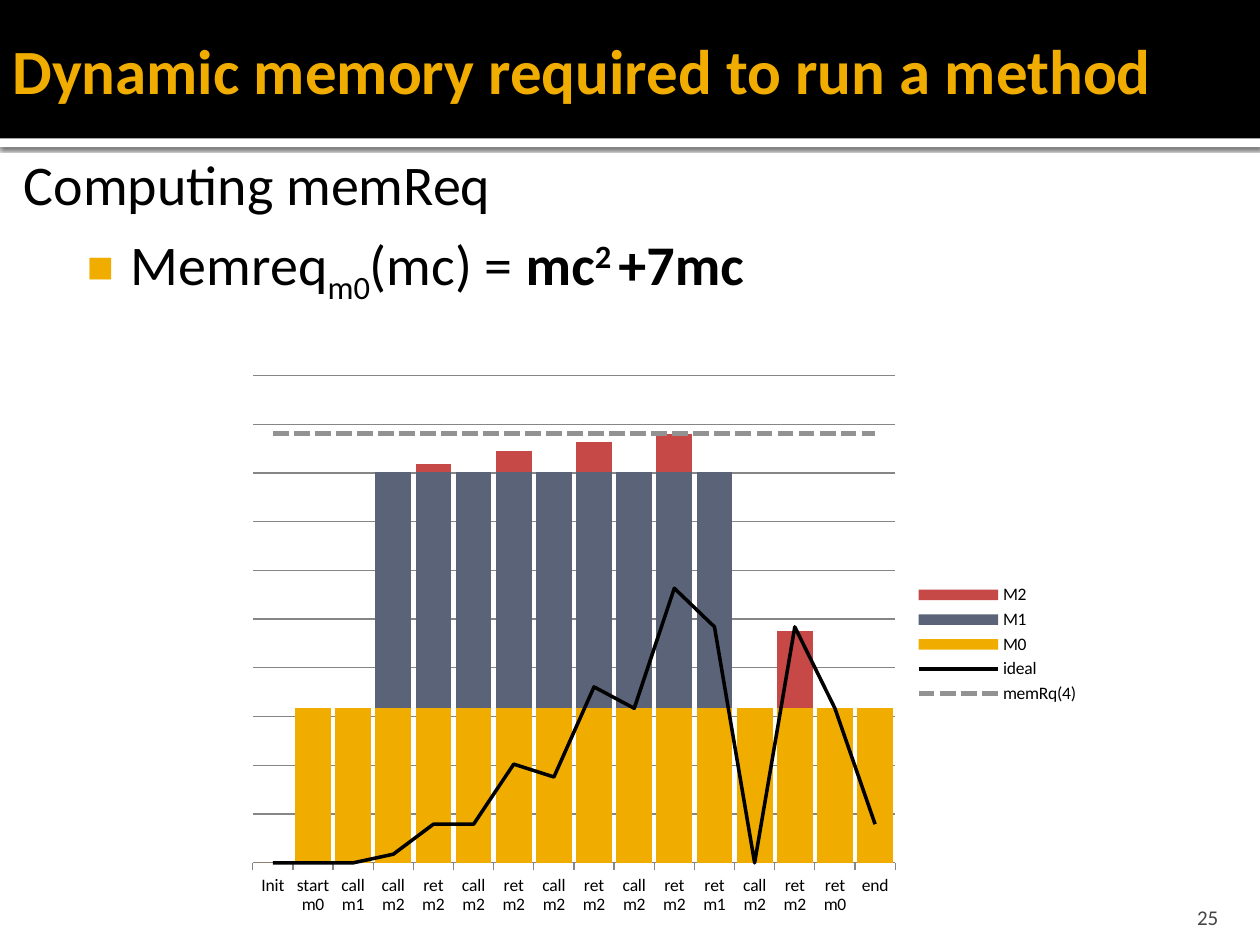
from lxml import etree
from pptx import Presentation
from pptx.chart.data import CategoryChartData
from pptx.dml.color import RGBColor
from pptx.enum.chart import XL_CHART_TYPE, XL_LEGEND_POSITION, XL_MARKER_STYLE, XL_TICK_MARK
from pptx.enum.dml import MSO_LINE
from pptx.enum.shapes import MSO_SHAPE
from pptx.enum.text import MSO_ANCHOR, MSO_AUTO_SIZE, PP_ALIGN
from pptx.oxml import parse_xml
from pptx.oxml.ns import nsdecls, qn
from pptx.util import Cm, Pt

STACKED = XL_CHART_TYPE.COLUMN_STACKED
RIGHT = XL_LEGEND_POSITION.RIGHT
TICK_OUT = XL_TICK_MARK.OUTSIDE
NO_MARK = XL_MARKER_STYLE.NONE
DASH, SOLID = MSO_LINE.SQUARE_DOT, MSO_LINE.SOLID
TOP, MIDDLE, BOTTOM = MSO_ANCHOR.TOP, MSO_ANCHOR.MIDDLE, MSO_ANCHOR.BOTTOM

FONT = "Calibri"
GOLD, BLACK, WHITE, GREY = "F0AD00", "000000", "FFFFFF", "868686"
TITLE = [("Dynamic memory required to run a method", True, 0)]
LEAD = [("Computing memReq", False, 0)]
FORMULA = [("Memreq", False, 0), ("m0", False, -25), ("(mc) = ", False, 0),
           ("mc", True, 0), ("2 ", True, 30), ("+7mc", True, 0)]
NUMBER = [("25", False, 0)]
STEPS = ["Init", "start m0", "call m1"] + ["call m2", "ret m2"] * 4 + [
    "ret m1", "call m2", "ret m2", "ret m0", "end"]
BARS = [("M0", GOLD, [0] + [36] * 15),
        ("M1", "5A6378", [0] * 3 + [55] * 9 + [0] * 4),
        ("M2", "C64847", [0, 0, 0, 0, 2, 0, 5, 0, 7, 0, 9, 0, 0, 18, 0, 0])]
LINES = [("ideal", BLACK, [0, 0, 0, 2, 9, 9, 23, 20, 41, 36, 64, 55, 0, 55, 36, 9], 2, SOLID),
         ("memRq(4)", "929292", [100] * 16, 3, DASH)]
PLOT = {"x": 0.02, "y": 0.02, "w": 0.75, "h": 0.87}


def rgb(code):
    """Turn a hex string into a colour."""
    return RGBColor.from_string(code)


def assign(item, values):
    """Set attributes from a dict."""
    for name, value in values.items():
        setattr(item, name, value)


def place(shape, box):
    """Move a shape to a box in centimetres."""
    assign(shape, dict(zip(("left", "top", "width", "height"), map(Cm, box))))


def write(shape, parts, size, color, anchor, pads, align=PP_ALIGN.LEFT):
    """Fill a shape with one formatted paragraph and return it."""
    frame = shape.text_frame
    names = ("margin_left", "margin_top", "margin_right", "margin_bottom")
    assign(frame, dict(zip(names, map(Cm, pads))))
    assign(frame, {"word_wrap": True, "auto_size": MSO_AUTO_SIZE.NONE, "vertical_anchor": anchor})
    para = frame.paragraphs[0]
    assign(para, {"alignment": align, "space_before": Pt(0)})
    for text, bold, base in parts:
        run = para.add_run()
        run.text = text
        assign(run.font, {"name": FONT, "size": Pt(size), "bold": bold})
        run.font.color.rgb = rgb(color)
        if base:
            run._r.get_or_add_rPr().set("baseline", str(base * 1000))
    return para


def indent(para, mark=None):
    """Give a paragraph a hanging indent and an optional bullet."""
    props = para._p.get_or_add_pPr()
    props.set("marL", str(Cm(1.22)))
    props.set("indent", str(-Cm(0.89)))
    if not mark:
        etree.SubElement(props, qn("a:buNone"))
        return
    color = etree.SubElement(props, qn("a:buClr"))
    etree.SubElement(color, qn("a:srgbClr"), val=GOLD)
    etree.SubElement(props, qn("a:buSzPct"), val="80000")
    etree.SubElement(props, qn("a:buFont"), typeface="Arial")
    etree.SubElement(props, qn("a:buChar"), char=mark)


def band(slide, box, color, depth):
    """Draw a plain band at a given depth in the stack."""
    shape = slide.shapes.add_shape(MSO_SHAPE.RECTANGLE, *map(Cm, box))
    shape.shadow.inherit = False
    shape.fill.solid()
    shape.fill.fore_color.rgb = rgb(color)
    shape.line.fill.background()
    slide.shapes._spTree.insert(depth, shape._element)
    return shape


def shade(shape):
    """Cast a soft shadow below a shape."""
    effects = shape._element.spPr.find(qn("a:effectLst"))
    effects.append(parse_xml(
        f'<a:outerShdw {nsdecls("a")} blurRad="{Pt(2.5)}" dist="{Pt(0.8)}" dir="5400000" '
        'algn="tl" rotWithShape="0"><a:srgbClr val="000000"><a:alpha val="60000"/>'
        '</a:srgbClr></a:outerShdw>'))


def split(chart):
    """Move the series after the bars into a line plot on the same axes."""
    bars = chart._chartSpace.find(".//" + qn("c:barChart"))
    plot = parse_xml(f'<c:lineChart {nsdecls("c")}><c:grouping val="standard"/>'
                     '<c:varyColors val="0"/></c:lineChart>')
    for ser in bars.findall(qn("c:ser"))[len(BARS):]:
        for flag in ser.findall(qn("c:invertIfNegative")):
            ser.remove(flag)
        plot.append(ser)
    etree.SubElement(plot, qn("c:marker"), val="1")
    for axis in bars.findall(qn("c:axId")):
        etree.SubElement(plot, qn("c:axId"), val=axis.get("val"))
    bars.addnext(plot)


def arrange(chart):
    """Fix the inner plot area inside the chart."""
    area = chart._chartSpace.find(".//" + qn("c:plotArea"))
    for old in area.findall(qn("c:layout")):
        area.remove(old)
    modes = "".join(f'<c:{key}Mode val="edge"/>' for key in "xy")
    sizes = "".join(f'<c:{key} val="{val}"/>' for key, val in PLOT.items())
    area.insert(0, parse_xml(
        f'<c:layout {nsdecls("c")}><c:manualLayout><c:layoutTarget val="inner"/>'
        f'{modes}{sizes}</c:manualLayout></c:layout>'))


def graph(slide, box):
    """Add the stacked columns with two lines over them."""
    data = CategoryChartData()
    data.categories = STEPS
    for name, _, values, *_ in BARS + LINES:
        data.add_series(name, values)
    chart = slide.shapes.add_chart(STACKED, *map(Cm, box), data).chart
    assign(chart, {"has_title": False, "has_legend": True})
    assign(chart.legend, {"position": RIGHT, "include_in_layout": False})
    assign(chart.font, {"name": FONT, "size": Pt(10)})
    chart.font.color.rgb = rgb(BLACK)
    steps, scale = chart.category_axis, chart.value_axis
    steps.major_tick_mark = TICK_OUT
    assign(scale, {"minimum_scale": 0, "maximum_scale": 113.64, "major_unit": 11.36,
                   "has_major_gridlines": True, "visible": False})
    for line in (steps.format.line, scale.major_gridlines.format.line):
        line.color.rgb = rgb(GREY)
        line.width = Pt(0.75)
    split(chart)
    arrange(chart)
    columns, curves = chart.plots
    assign(columns, {"gap_width": 12, "overlap": 100, "vary_by_categories": False})
    for ser, (_, color, _) in zip(columns.series, BARS):
        ser.format.fill.solid()
        ser.format.fill.fore_color.rgb = rgb(color)
    for ser, (_, color, _, width, dash) in zip(curves.series, LINES):
        ser.smooth = False
        ser.marker.style = NO_MARK
        ser.format.line.color.rgb = rgb(color)
        assign(ser.format.line, {"width": Pt(width), "dash_style": dash})


def main():
    """Build the slide and save it."""
    deck = Presentation()
    assign(deck, {"slide_width": Cm(25.4), "slide_height": Cm(19.05)})
    slide = deck.slides.add_slide(deck.slide_layouts[3])
    shade(band(slide, (0, 2.77, 25.4, 0.2), WHITE, 2))
    band(slide, (0, 0, 25.4, 2.79), BLACK, 3)
    title, body, lead = slide.placeholders
    place(title, (0, 0.41, 25.4, 1.96))
    place(body, (1.27, 4.37, 22.86, 13.41))
    place(lead, (0, 2.77, 25.4, 1.78))
    pads = (0.15, 0.25, 0.25, 0.13)
    write(title, TITLE, 36, GOLD, MIDDLE, (0.25, 0.13, 0.13, 0.13))
    indent(write(body, FORMULA, 32, BLACK, TOP, pads), "■")
    indent(write(lead, LEAD, 32, BLACK, TOP, pads))
    graph(slide, (4.75, 7.34, 17.27, 11.3))
    number = slide.shapes.add_textbox(*map(Cm, (22.78, 17.98, 2.03, 0.76)))
    write(number, NUMBER, 12, "454545", BOTTOM, (0.25, 0.13, 0.25, 0), PP_ALIGN.RIGHT)
    deck.save("out.pptx")


if __name__ == "__main__":
    main()
